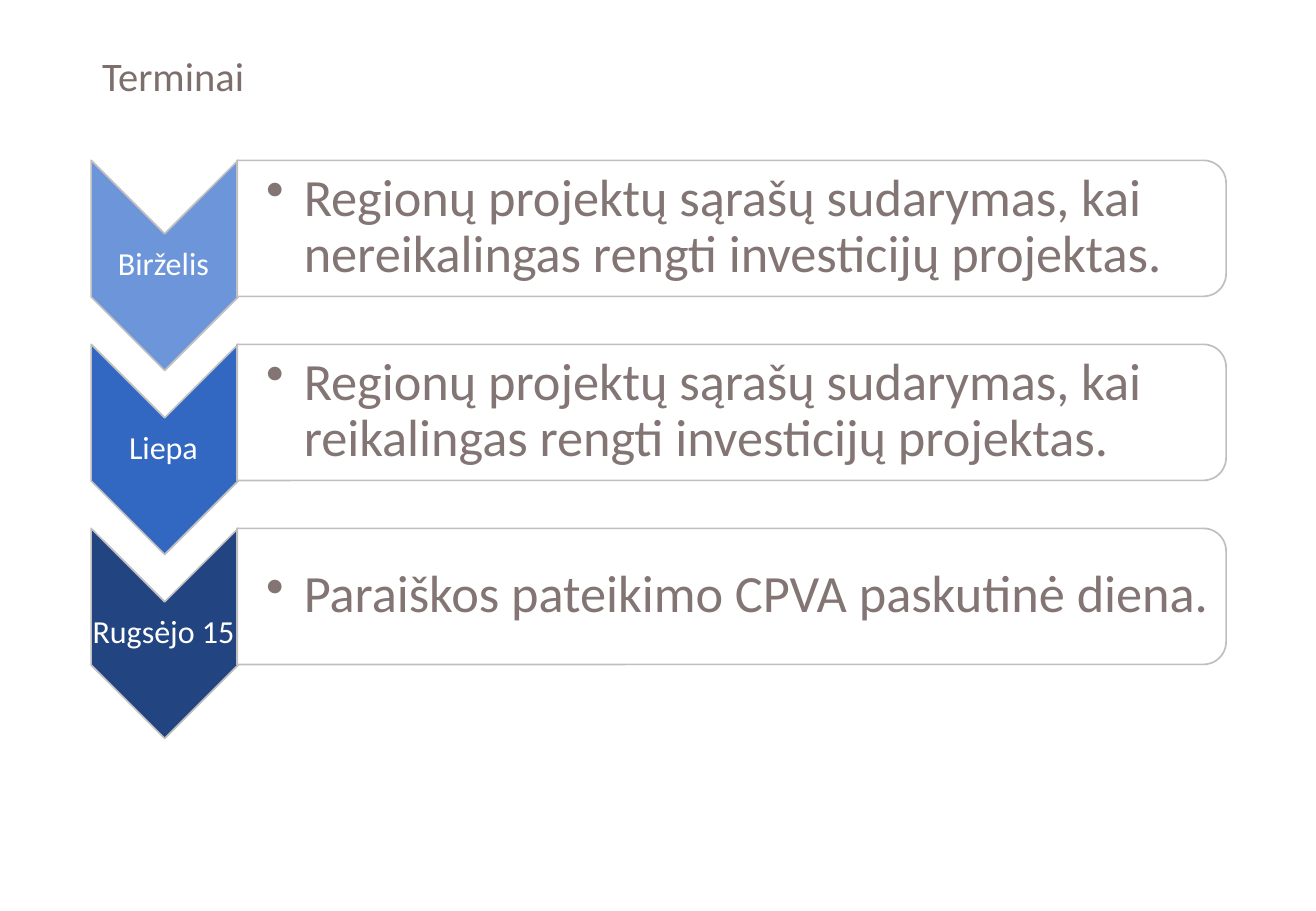
from lxml import etree
from pptx import Presentation
from pptx import util as u
from pptx.dml.color import RGBColor
from pptx.enum import shapes, text
from pptx.oxml.ns import qn

COLORS = {
    "title": "7D6F6C", "task": "827573", "month": "FFFFFF",
    "panel": "FFFFFF", "outline": "BFBFBF",
    "june": "6D96DA", "july": "3268C2", "september": "224581",
}
FORMATS = {
    "title": {"size": u.Pt(24), "name": "Calibri", "bold": False},
    "month": {"size": u.Pt(19), "name": "Calibri"},
    "task": {"size": u.Pt(31), "name": "Calibri"},
}
DEADLINES = [
    ("Birželis", "june",
     "Regionų projektų sąrašų sudarymas, kai nereikalingas rengti investicijų projektas."),
    ("Liepa", "july",
     "Regionų projektų sąrašų sudarymas, kai reikalingas rengti investicijų projektas."),
    ("Rugsėjo 15", "september", "Paraiškos pateikimo CPVA paskutinė diena."),
]
PITCH = 3.03 / 2


class DeadlineSlide:
    def __init__(self, deck):
        self.slide = deck.slides.add_slide(deck.slide_layouts[5])

    def set_words(self, frame, words, style, align, insets=None):
        settings = {"word_wrap": True, "auto_size": text.MSO_AUTO_SIZE.NONE,
                    "vertical_anchor": text.MSO_ANCHOR.MIDDLE}
        for side, inset in (insets or {}).items():
            settings["margin_" + side] = u.Inches(inset)
        for key, value in settings.items():
            setattr(frame, key, value)
        paragraph = frame.paragraphs[0]
        paragraph.alignment = align
        paragraph.line_spacing = 0.9
        run = paragraph.add_run()
        run.text = words
        for key, value in FORMATS[style].items():
            setattr(run.font, key, value)
        run.font.color.rgb = RGBColor.from_string(COLORS[style])
        return paragraph

    def title(self, words, box):
        heading = self.slide.shapes.title
        for key, value in zip(("left", "top", "width", "height"), box):
            setattr(heading, key, u.Inches(value))
        self.set_words(heading.text_frame, words, "title", text.PP_ALIGN.LEFT)

    def turned_shape(self, kind, box, fill, opacity=100):
        shape = self.slide.shapes.add_shape(kind, *map(u.Inches, box))
        shape.rotation = 90
        shape.shadow.inherit = False
        shape.fill.solid()
        shape.fill.fore_color.rgb = RGBColor.from_string(COLORS[fill])
        shape.line.color.rgb = RGBColor.from_string(COLORS["outline"])
        shape.line.width = u.Pt(1)
        if opacity < 100:
            color = shape._element.spPr.find(qn("a:solidFill"))[0]
            etree.SubElement(color, qn("a:alpha")).set("val", str(opacity * 1000))

    def label(self, words, box, style, align, insets):
        frame = self.slide.shapes.add_textbox(*map(u.Inches, box)).text_frame
        return self.set_words(frame, words, style, align, insets)

    def bullet(self, paragraph, indent):
        props = paragraph._p.get_or_add_pPr()
        props.set("marL", str(u.Inches(indent)))
        props.set("indent", str(u.Inches(-indent)))
        etree.SubElement(props, qn("a:buChar")).set("char", "•")

    def deadline(self, month, fill, task, drop):
        self.turned_shape(shapes.MSO_SHAPE.CHEVRON, (0.49, 1.58 + drop, 1.73, 1.21), fill)
        self.label(month, (0.74, 1.92 + drop, 1.21, 0.52), "month", text.PP_ALIGN.CENTER,
                   dict.fromkeys(("left", "top", "right", "bottom"), 0.01))
        self.turned_shape(shapes.MSO_SHAPE.ROUND_2_SAME_RECTANGLE,
                          (5.46, -2.19 + drop, 1.12, 8.14), "panel", 90)
        paragraph = self.label(task, (1.95, 1.37 + drop, 8.08, 1.01), "task", text.PP_ALIGN.LEFT,
                               {"left": 0.24, "top": 0.02, "right": 0.02, "bottom": 0.02})
        self.bullet(paragraph, 0.31)


def main():
    deck = Presentation()
    deck.slide_width, deck.slide_height = u.Inches(10.83), u.Inches(7.5)
    page = DeadlineSlide(deck)
    page.title("Terminai", (0.74, 0.35, 9.34, 0.59))
    for row, (month, fill, task) in enumerate(DEADLINES):
        page.deadline(month, fill, task, row * PITCH)
    deck.save("out.pptx")


if __name__ == "__main__":
    main()
